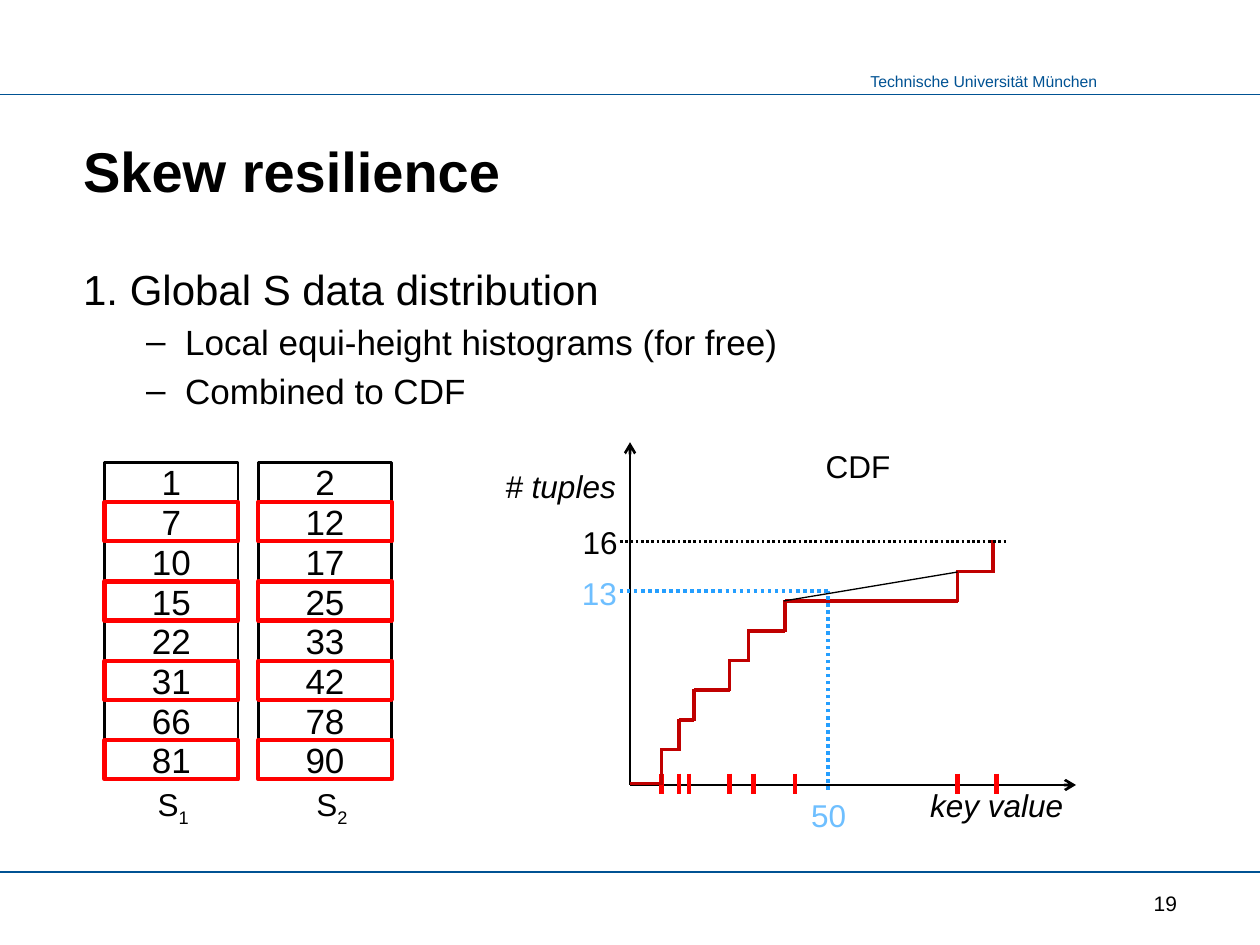
"""Build the skew resilience slide with its sorted runs and CDF plot."""
from pptx import Presentation
from pptx import util as u
from pptx.dml import color
from pptx.enum import dml, shapes, text
from pptx.oxml import ns, xmlchemy

COLORS = {"black": "000000", "white": "FFFFFF", "rule": "005293", "red": "FF0000",
          "step": "C00000", "guide": "259FFF", "reading": "6EBFFF"}
LEFT, CENTER, RIGHT = text.PP_ALIGN.LEFT, text.PP_ALIGN.CENTER, text.PP_ALIGN.RIGHT
TOP, MIDDLE = text.MSO_ANCHOR.TOP, text.MSO_ANCHOR.MIDDLE


def rgb(name):
    return color.RGBColor.from_string(COLORS[name])


def write_text(paragraph, content, size=18, ink="black", bold=False, italic=False,
               baseline=None):
    run = paragraph.add_run()
    run.text = content
    run.font.name, run.font.size = "Arial", u.Pt(size)
    run.font.bold, run.font.italic = bold, italic
    run.font.color.rgb = rgb(ink)
    if baseline is not None:
        run.font._element.set("baseline", str(baseline * 1000))


class SlideBuilder:
    """Hold the style and the current slide."""

    def __init__(self, presentation):
        self.slide = presentation.slides.add_slide(presentation.slide_layouts[1])

    def place(self, shape, left, top, width, height):
        shape.left, shape.top = u.Inches(left), u.Inches(top)
        shape.width, shape.height = u.Inches(width), u.Inches(height)

    def title(self, content, *box):
        shape = self.slide.shapes.title
        self.place(shape, *box)
        frame = shape.text_frame
        frame.auto_size = text.MSO_AUTO_SIZE.NONE
        frame.vertical_anchor = text.MSO_ANCHOR.BOTTOM
        frame.paragraphs[0].alignment = LEFT
        write_text(frame.paragraphs[0], content, size=32, bold=True)

    def body(self, heading, items, *box):
        shape = self.slide.placeholders[1]
        self.place(shape, *box)
        frame = shape.text_frame
        frame.auto_size = text.MSO_AUTO_SIZE.NONE
        for index, content in enumerate([heading, *items]):
            paragraph = frame.add_paragraph() if index else frame.paragraphs[0]
            properties = paragraph._p.get_or_add_pPr()
            if index:
                paragraph.level = 1
                margin, indent = 0.81, -0.31
                bullet = xmlchemy.OxmlElement("a:buChar")
                bullet.set("char", "–")
            else:
                paragraph.space_before = u.Pt(0)
                margin, indent = 0.38, -0.38
                bullet = xmlchemy.OxmlElement("a:buNone")
            properties.set("marL", str(u.Inches(margin)))
            properties.set("indent", str(u.Inches(indent)))
            properties.append(bullet)
            write_text(paragraph, content, size=20 if index else 24)

    def label(self, content, left, top, width, height=0.4, align=CENTER, anchor=TOP,
              wrap=True, subscript=None, **style):
        shape = self.slide.shapes.add_textbox(*map(u.Inches, (left, top, width, height)))
        frame = shape.text_frame
        frame.word_wrap, frame.vertical_anchor = wrap, anchor
        paragraph = frame.paragraphs[0]
        paragraph.alignment = align
        write_text(paragraph, content, **style)
        if subscript:
            write_text(paragraph, subscript, baseline=-25, **style)

    def box(self, left, top, width, height, ink="black", weight=1.5, content=None):
        shape = self.slide.shapes.add_shape(
            shapes.MSO_SHAPE.RECTANGLE, *map(u.Inches, (left, top, width, height)))
        shape.shadow.inherit = False
        shape.line.color.rgb, shape.line.width = rgb(ink), u.Pt(weight)
        if content is None:
            shape.fill.background()
            return
        shape.fill.solid()
        shape.fill.fore_color.rgb = rgb("white")
        shape.text_frame.vertical_anchor = MIDDLE
        shape.text_frame.paragraphs[0].alignment = CENTER
        write_text(shape.text_frame.paragraphs[0], content, size=20)

    def line(self, x1, y1, x2, y2, ink="black", weight=1.5, dotted=False, arrow=False):
        connector = self.slide.shapes.add_connector(
            shapes.MSO_CONNECTOR.STRAIGHT, *map(u.Inches, (x1, y1, x2, y2)))
        connector.line.color.rgb, connector.line.width = rgb(ink), u.Pt(weight)
        if dotted:
            connector.line.dash_style = dml.MSO_LINE.ROUND_DOT
        properties = connector._element.spPr
        if arrow:
            tail = xmlchemy.OxmlElement("a:tailEnd")
            tail.set("type", "arrow")
            properties.find(ns.qn("a:ln")).append(tail)
        properties.append(xmlchemy.OxmlElement("a:effectLst"))


def draw_runs(builder):
    runs = {"1": (0.83, 1.06, [1, 7, 10, 15, 22, 31, 66, 81]),
            "2": (2.05, 2.32, [2, 12, 17, 25, 33, 42, 78, 90])}
    top, pitch, width, height = 3.67, 0.315, 1.06, 0.31
    for name, (left, label_left, keys) in runs.items():
        for row, key in enumerate(keys):
            builder.box(left, top + row * pitch, width, height, content=str(key))
        for row in range(1, len(keys), 2):
            builder.box(left, top + row * pitch, width, height, ink="red", weight=2.5)
        builder.label("S", label_left, 6.18, 0.63, subscript=name)


def draw_cdf(builder):
    origin_x, axis_y = 5, 6.23
    builder.line(origin_x, axis_y, 8.54, axis_y, arrow=True)
    builder.line(origin_x, axis_y, origin_x, 3.51, arrow=True)
    builder.label("# tuples", 3.82, 3.66, 1.26, italic=True)
    builder.label("key value", 7.28, 6.19, 1.26, italic=True)
    builder.label("CDF", 6.18, 3.5, 1.26)

    for x in (5.25, 5.39, 5.47, 5.79, 5.98, 6.31, 7.6, 7.91):
        builder.line(x, 6.14, x, 6.3, ink="red", weight=2.5)

    step_x = [origin_x, 5.25, 5.39, 5.51, 5.79, 5.94, 6.23, 7.6, 7.88]
    step_y = [6.22] + [5.95 - 0.236 * step for step in range(8)]
    for step in range(8):
        x, next_x = step_x[step:step + 2]
        y, next_y = step_y[step:step + 2]
        builder.line(x, y, next_x, y, ink="step", weight=2)
        builder.line(next_x, y + 0.01, next_x, next_y - 0.01, ink="step", weight=2)

    key_x, count_y = 6.57, 4.69
    builder.line(key_x, 6.27, key_x, count_y, ink="guide", weight=2, dotted=True)
    builder.line(6.22, 4.77, 7.6, 4.54, weight=0.75)
    builder.line(4.92, count_y, key_x, count_y, ink="guide", weight=2, dotted=True)
    builder.line(4.92, 4.3, 7.99, 4.3, dotted=True)
    builder.label("50", 6.34, 6.27, 0.54, align=LEFT, ink="reading")
    builder.label("16", 3.9, 4.1, 1.1, align=RIGHT)
    builder.label("13", 4.52, 4.51, 0.54, align=LEFT, ink="reading")


def main():
    presentation = Presentation()
    presentation.slide_width, presentation.slide_height = u.Inches(10), u.Inches(7.5)
    builder = SlideBuilder(presentation)
    builder.label("Technische Universität München", 6.81, 0.52, 2.01, 0.25,
                  align=LEFT, wrap=False, size=9, ink="rule")
    for y in (6.92, 0.75):
        builder.line(0, y, 10, y, ink="rule", weight=0.75)
    builder.title("Skew resilience", 0.56, 1, 8.89, 0.67)
    builder.body("1. Global S data distribution",
                 ["Local equi-height histograms (for free)", "Combined to CDF"],
                 0.56, 2.04, 8.89, 4.71)
    draw_runs(builder)
    draw_cdf(builder)
    builder.label("19", 7.36, 7, 2.08, 0.33, align=RIGHT, anchor=MIDDLE, size=12)
    presentation.save("out.pptx")


if __name__ == "__main__":
    main()
